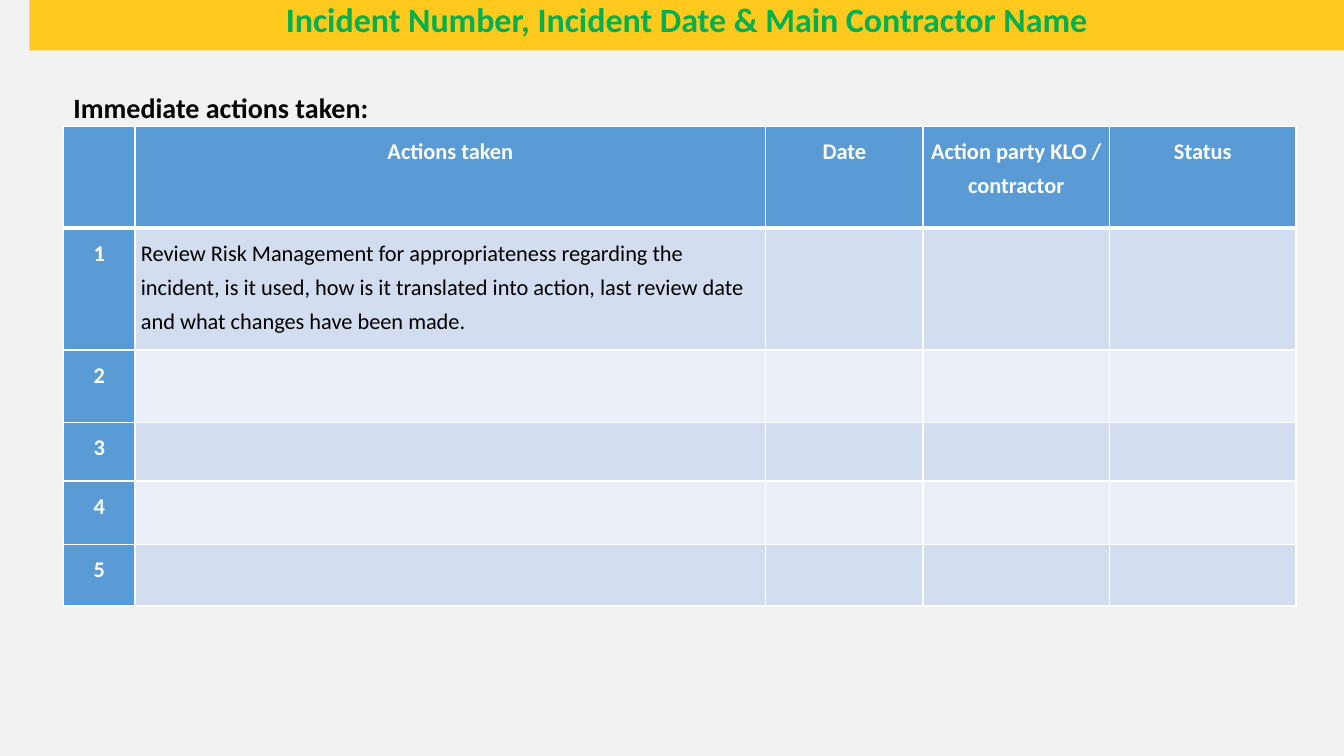
from dataclasses import dataclass

from lxml.etree import SubElement
from pptx import Presentation
from pptx.dml.color import RGBColor
from pptx.enum.text import MSO_ANCHOR, MSO_AUTO_SIZE, PP_ALIGN
from pptx.oxml.ns import qn
from pptx.slide import Slide
from pptx.table import _Cell
from pptx.text.text import _Paragraph
from pptx.util import Cm, Pt

PAPER = RGBColor(0xF2, 0xF2, 0xF2)
GOLD = RGBColor(0xFF, 0xC9, 0x1D)
GREEN = RGBColor(0x00, 0xB0, 0x50)
BLACK = RGBColor(0x00, 0x00, 0x00)
WHITE = RGBColor(0xFF, 0xFF, 0xFF)
BLUE = RGBColor(0x5B, 0x9B, 0xD5)
BANDS = (RGBColor(0xD2, 0xDE, 0xEF), RGBColor(0xEA, 0xEF, 0xF7))

WIDTHS = (1.8, 15.9, 3.96, 4.7, 4.7)
HEADS = ("", "Actions taken", "Date", "Action party KLO / contractor", "Status")


@dataclass
class Action:
    height: float
    text: str = ""


ACTIONS = (
    Action(3.07, "Review Risk Management for appropriateness regarding the "
                 "incident, is it used, how is it translated into action, "
                 "last review date and what changes have been made."),
    Action(1.83),
    Action(1.47),
    Action(1.6),
    Action(1.55),
)


def style(para: _Paragraph, size: float, color: RGBColor, bold: bool = True) -> None:
    for run in para.runs:
        font = run.font
        font.name = "Calibri"
        font.size = Pt(size)
        font.bold = bold
        font.color.rgb = color


def border(cell: _Cell, base: float) -> None:
    props = cell._tc.get_or_add_tcPr()
    for side, width in (("L", 1), ("R", 1), ("T", 1), ("B", base)):
        line = SubElement(props, qn(f"a:ln{side}"), w=str(Pt(width)))
        fill = SubElement(line, qn("a:solidFill"))
        SubElement(fill, qn("a:srgbClr"), val=str(WHITE))


def paint(cell: _Cell, text: str, fill: RGBColor, color: RGBColor = WHITE,
          bold: bool = True, base: float = 1) -> None:
    border(cell, base)
    cell.fill.solid()
    cell.fill.fore_color.rgb = fill
    if not text:
        return
    cell.margin_left = cell.margin_right = Cm(0.15)
    cell.margin_top = cell.margin_bottom = Cm(0.13)
    para = cell.text_frame.paragraphs[0]
    para.text = text
    para.line_spacing = 1.25
    para.alignment = PP_ALIGN.CENTER if bold else PP_ALIGN.LEFT
    style(para, 16, color, bold)


def add_title(slide: Slide) -> None:
    title = slide.shapes.title
    title.left, title.top = Cm(0.74), Cm(0)
    title.width, title.height = Cm(33.13), Cm(1.27)
    title.fill.solid()
    title.fill.fore_color.rgb = GOLD
    frame = title.text_frame
    frame.text = "Incident Number, Incident Date & Main Contractor Name"
    frame.auto_size = MSO_AUTO_SIZE.NONE
    frame.vertical_anchor = MSO_ANCHOR.MIDDLE
    frame.margin_top, frame.margin_bottom = Cm(0), Cm(0.2)
    para = frame.paragraphs[0]
    para.alignment = PP_ALIGN.CENTER
    para.line_spacing = 0.9
    style(para, 24.3, GREEN)


def add_label(slide: Slide) -> None:
    box = slide.shapes.add_textbox(Cm(1.6), Cm(2.16), Cm(11.5), Cm(1.12))
    frame = box.text_frame
    frame.word_wrap = True
    frame.text = "Immediate actions taken:"
    style(frame.paragraphs[0], 20, BLACK)


def add_grid(slide: Slide) -> None:
    heights = (2.57, *(act.height for act in ACTIONS))
    table = slide.shapes.add_table(
        len(heights), len(WIDTHS), Cm(1.6), Cm(3.18),
        Cm(sum(WIDTHS)), Cm(sum(heights))).table
    for col, width in zip(table.columns, WIDTHS):
        col.width = Cm(width)
    for row, height in zip(table.rows, heights):
        row.height = Cm(height)

    # Header row
    for col, head in enumerate(HEADS):
        paint(table.cell(0, col), head, BLUE, base=3)

    # Numbered, banded rows
    for num, act in enumerate(ACTIONS, 1):
        paint(table.cell(num, 0), str(num), BLUE)
        for col in range(1, len(WIDTHS)):
            text = act.text if col == 1 else ""
            paint(table.cell(num, col), text, BANDS[(num - 1) % 2], BLACK, False)


def main() -> None:
    deck = Presentation()
    deck.slide_width, deck.slide_height = Cm(33.87), Cm(19.05)
    slide = deck.slides.add_slide(deck.slide_layouts[5])
    slide.background.fill.solid()
    slide.background.fill.fore_color.rgb = PAPER
    add_title(slide)
    add_label(slide)
    add_grid(slide)
    deck.save("out.pptx")


if __name__ == "__main__":
    main()
